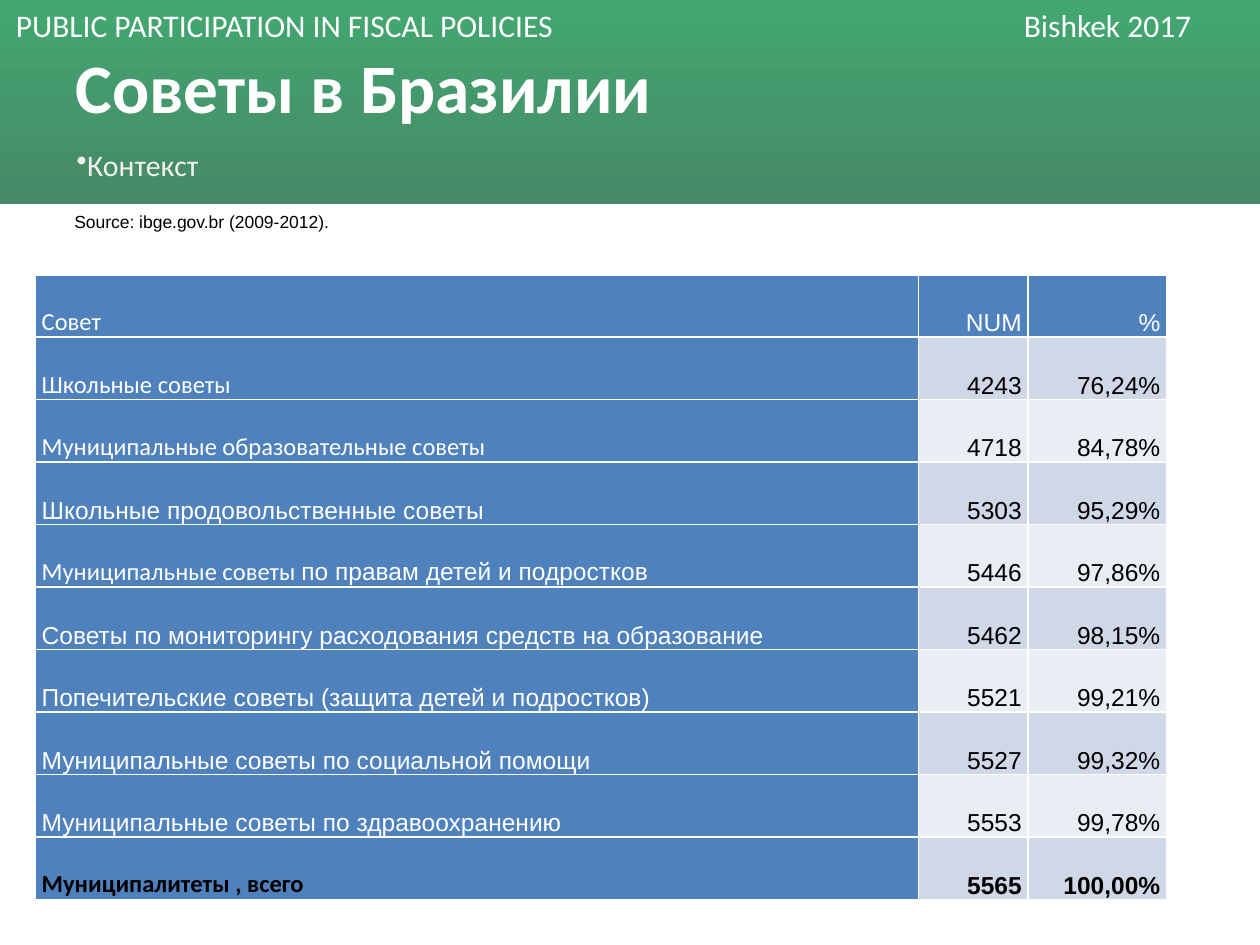
from lxml.etree import SubElement
from pptx import Presentation
from pptx.dml.color import RGBColor
from pptx.enum.shapes import MSO_SHAPE
from pptx.enum.text import MSO_ANCHOR as ANCHOR, MSO_AUTO_SIZE as AUTO_SIZE, PP_ALIGN as ALIGN
from pptx.oxml.ns import qn
from pptx.util import Pt

COLORS = {
    "white": "FFFFFF", "black": "000000", "pale": "F2F2F2",
    "band_top": "43A771", "band_bottom": "468966",
    "blue": "4F81BD", "odd_row": "D0D8E8", "even_row": "E9EDF4",
}
CALIBRI, ARIAL = "Calibri", "Arial"
SLIDE_WIDTH, SLIDE_HEIGHT = 720, 540
BAND_HEIGHT = 116.64

COLUMN_WIDTHS = [504.7, 62.6, 79.2]
ROW_HEIGHT = 35.71
# Each council name is a list of (text, font) runs
COUNCILS = [
    ([("Совет", CALIBRI)], "NUM", "%"),
    ([("Школьные советы", CALIBRI)], "4243", "76,24%"),
    ([("Муниципальные образовательные советы", CALIBRI)], "4718", "84,78%"),
    ([("Школьные продовольственные советы", ARIAL)], "5303", "95,29%"),
    ([("Муниципальные советы ", CALIBRI), ("по правам детей и подростков", ARIAL)],
     "5446", "97,86%"),
    ([("Советы по мониторингу расходования средств на образование", ARIAL)], "5462", "98,15%"),
    ([("Попечительские советы (защита детей и подростков)", ARIAL)], "5521", "99,21%"),
    ([("Муниципальные советы по социальной помощи", ARIAL)], "5527", "99,32%"),
    ([("Муниципальные советы по здравоохранению", ARIAL)], "5553", "99,78%"),
    ([("Муниципалитеты , всего", CALIBRI)], "5565", "100,00%"),
]


def rgb(name):
    return RGBColor.from_string(COLORS[name])


def write(frame, text, font=CALIBRI, size=14, color="white", bold=False,
          align=ALIGN.LEFT, anchor=ANCHOR.TOP, line_spacing=None):
    """Fill the frame with one paragraph; text is a string or (text, font) runs."""
    frame.word_wrap = True
    frame.vertical_anchor = anchor
    paragraph = frame.paragraphs[0]
    paragraph.alignment = align
    if line_spacing:
        paragraph.line_spacing = line_spacing
    for words, face in [(text, font)] if isinstance(text, str) else text:
        run = paragraph.add_run()
        run.text = words
        run.font.name, run.font.size, run.font.bold = face, Pt(size), bold
        run.font.color.rgb = rgb(color)
    return paragraph


def add_label(slide, box, text, **text_format):
    label = slide.shapes.add_textbox(*map(Pt, box))
    return write(label.text_frame, text, **text_format)


def add_band(slide):
    band = slide.shapes.add_shape(MSO_SHAPE.RECTANGLE, 0, 0, Pt(SLIDE_WIDTH), Pt(BAND_HEIGHT))
    band.shadow.inherit = False
    band.line.fill.background()
    band.fill.gradient()
    band.fill.gradient_angle = 270
    for stop, name in zip(band.fill.gradient_stops, ("band_top", "band_bottom")):
        stop.color.rgb = rgb(name)
    # Behind the title placeholder
    slide.shapes._spTree.insert(2, band._element)


def set_title(slide, box, text, **text_format):
    title = slide.shapes.title
    title.left, title.top, title.width, title.height = map(Pt, box)
    title.text_frame.auto_size = AUTO_SIZE.NONE
    write(title.text_frame, text, **text_format)


def set_tab_stop(paragraph, position):
    stops = SubElement(paragraph._p.get_or_add_pPr(), qn("a:tabLst"))
    SubElement(stops, qn("a:tab"), pos=str(Pt(position)), algn="l")


def set_bullet(paragraph, character):
    properties = paragraph._p.get_or_add_pPr()
    properties.set("marL", "0")
    properties.set("indent", "0")
    SubElement(properties, qn("a:buChar"), char=character)


def set_borders(cell, color, width):
    properties = cell._tc.get_or_add_tcPr()
    for side in ("lnL", "lnR", "lnT", "lnB"):
        line = SubElement(properties, qn(f"a:{side}"), w=str(Pt(width)))
        fill = SubElement(line, qn("a:solidFill"))
        SubElement(fill, qn("a:srgbClr"), val=COLORS[color])


def format_cell(cell, text, fill, **text_format):
    cell.margin_left = cell.margin_right = Pt(3.6)
    cell.margin_top = cell.margin_bottom = 0
    set_borders(cell, "white", 1)
    cell.fill.solid()
    cell.fill.fore_color.rgb = rgb(fill)
    write(cell.text_frame, text, line_spacing=1.15, **text_format)
    cell.vertical_anchor = ANCHOR.BOTTOM


def add_councils_table(slide, left, top):
    last = len(COUNCILS) - 1
    table = slide.shapes.add_table(
        len(COUNCILS), len(COLUMN_WIDTHS), Pt(left), Pt(top),
        Pt(sum(COLUMN_WIDTHS)), Pt(ROW_HEIGHT * len(COUNCILS))).table
    for column, width in zip(table.columns, COLUMN_WIDTHS):
        column.width = Pt(width)
    for r, (council, *figures) in enumerate(COUNCILS):
        table.rows[r].height = Pt(ROW_HEIGHT)
        total = r == last
        format_cell(table.cell(r, 0), council, "blue",
                    color="black" if total else "white", bold=total)
        row_fill = "blue" if r == 0 else "odd_row" if r % 2 else "even_row"
        for c, figure in enumerate(figures, start=1):
            format_cell(table.cell(r, c), figure, row_fill, font=ARIAL, bold=total,
                        color="black" if r else "white", align=ALIGN.RIGHT)


def main():
    deck = Presentation()
    deck.slide_width, deck.slide_height = Pt(SLIDE_WIDTH), Pt(SLIDE_HEIGHT)
    slide = deck.slides.add_slide(deck.slide_layouts[5])

    # Green band with running head, title and subtitle
    add_band(slide)
    running_head = add_label(slide, (2, 0, 704, 29),
                             "PUBLIC PARTICIPATION IN FISCAL POLICIES\tBishkek 2017", size=18)
    set_tab_stop(running_head, 576)
    set_title(slide, (36, 21.6, 648, 55.4), "Советы в Бразилии",
              size=39.6, bold=True, anchor=ANCHOR.MIDDLE)
    subtitle = add_label(slide, (36.7, 77, 646.6, 33.8), "Контекст",
                         size=17, color="pale", anchor=ANCHOR.MIDDLE)
    subtitle.space_before = Pt(3.4)
    set_bullet(subtitle, "•")

    # Source line
    source = add_label(slide, (0, BAND_HEIGHT, SLIDE_WIDTH, 19.4),
                       "Source: ibge.gov.br (2009-2012).", font=ARIAL, size=10,
                       color="black", align=ALIGN.JUSTIFY, anchor=ANCHOR.MIDDLE)
    source._p.get_or_add_pPr().set("indent", str(Pt(35.4)))

    # Councils and their share of municipalities
    add_councils_table(slide, 20.2, 157)

    deck.save("out.pptx")


if __name__ == "__main__":
    main()
